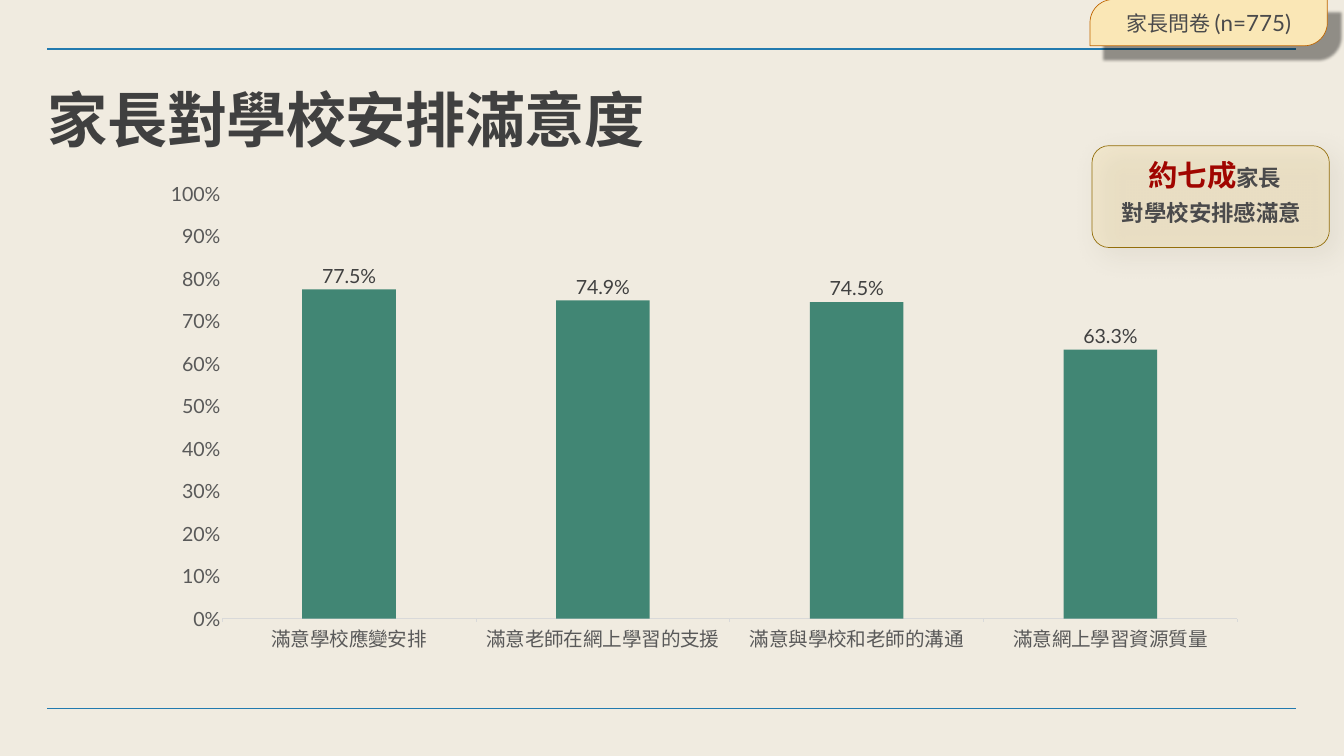
import lxml.etree
import pptx
import pptx.chart.data
import pptx.dml.color
import pptx.enum.chart
import pptx.enum.shapes
import pptx.enum.text
import pptx.oxml.ns
import pptx.util

COLOURS = {
    "page": "F0EBE0", "rule": "227AAF", "title": "404040", "axis": "595959",
    "axis_line": "D9D9D9", "bar": "277765", "tag": "FAE7B6", "tag_line": "BF6500",
    "card": "F7DC92", "card_line": "936E0A", "text": "4A4A4B", "accent": "A00500",
    "tag_shadow": "000000", "card_shadow": "4E4226",
}
RGB = {name: pptx.dml.color.RGBColor.from_string(value) for name, value in COLOURS.items()}
QN = pptx.oxml.ns.qn
CENTER = pptx.enum.text.PP_ALIGN.CENTER

deck = pptx.Presentation()
deck.slide_width = pptx.util.Inches(26.67)
deck.slide_height = pptx.util.Inches(15)
page = deck.slides.add_slide(deck.slide_layouts[6])
page.background.fill.solid()
page.background.fill.fore_color.rgb = RGB["page"]


def percent(left, top, width, height):
    sides = (deck.slide_width, deck.slide_height) * 2
    return [round(side * share / 100) for side, share in zip(sides, (left, top, width, height))]


def set_font(font, size, colour, bold=False, name="Lato"):
    values = {"size": pptx.util.Pt(size), "name": name, "bold": bold}
    for key, value in values.items():
        setattr(font, key, value)
    font.color.rgb = RGB[colour]


for height, weight in ((6.47, 4), (93.73, 1)):
    rule = page.shapes.add_connector(
        pptx.enum.shapes.MSO_CONNECTOR.STRAIGHT, *percent(3.52, height, 96.44, height))
    rule.line.color.rgb = RGB["rule"]
    rule.line.width = pptx.util.Pt(weight)
    lxml.etree.SubElement(rule._element.spPr, QN("a:effectLst"))

title = page.shapes.add_textbox(*percent(3.34, 12.27, 85.83, 23.53))
para = title.text_frame.paragraphs[0]
para.line_spacing = 0.8
span = para.add_run()
span.text = "家長對學校安排滿意度"
set_font(span.font, 86, "title", True, "Arial")
span.font._element.set("spc", "-90")

satisfaction = pptx.chart.data.CategoryChartData(number_format="0.0%")
satisfaction.categories = [
    "滿意學校應變安排", "滿意老師在網上學習的支援", "滿意與學校和老師的溝通", "滿意網上學習資源質量"]
satisfaction.add_series("Series 1", (0.775, 0.749, 0.745, 0.633))
chart = page.shapes.add_chart(
    pptx.enum.chart.XL_CHART_TYPE.COLUMN_CLUSTERED,
    *percent(7.09, 24.07, 85.83, 64.87), satisfaction).chart
chart.has_legend = False
chart.has_title = False
set_font(chart.font, 24, "axis")

value_format = {
    "minimum_scale": 0, "maximum_scale": 1, "major_unit": 0.1, "has_major_gridlines": False,
    "major_tick_mark": pptx.enum.chart.XL_TICK_MARK.NONE,
}
for key, value in value_format.items():
    setattr(chart.value_axis, key, value)
chart.value_axis.tick_labels.number_format = "0%"
chart.value_axis.tick_labels.number_format_is_linked = False
chart.value_axis.format.line.fill.background()
chart.category_axis.major_tick_mark = pptx.enum.chart.XL_TICK_MARK.OUTSIDE
chart.category_axis.format.line.color.rgb = RGB["axis_line"]
chart.category_axis.format.line.width = pptx.util.Pt(0.75)
for axis in (chart.value_axis, chart.category_axis):
    set_font(axis.tick_labels.font, 28, "axis")

plot = chart.plots[0]
plot.gap_width = 171
plot.vary_by_categories = False
plot.has_data_labels = True
label_format = {
    "number_format": "0.0%", "number_format_is_linked": False, "show_value": True,
    "position": pptx.enum.chart.XL_LABEL_POSITION.OUTSIDE_END,
}
for key, value in label_format.items():
    setattr(plot.data_labels, key, value)
set_font(plot.data_labels.font, 28, "title")
bars = plot.series[0].format.fill
bars.solid()
bars.fore_color.rgb = RGB["bar"]

plot_area = chart._chartSpace.find(".//" + QN("c:plotArea"))
for old_layout in plot_area.findall(QN("c:layout")):
    plot_area.remove(old_layout)
layout = lxml.etree.Element(QN("c:layout"))
plot_area.insert(0, layout)
manual = lxml.etree.SubElement(layout, QN("c:manualLayout"))
plot_layout = {
    "layoutTarget": "inner", "xMode": "edge", "yMode": "edge",
    "x": 0.11, "y": 0.02, "w": 0.88, "h": 0.87,
}
for key, value in plot_layout.items():
    lxml.etree.SubElement(manual, QN("c:" + key)).set("val", str(value))

SHAPE = pptx.enum.shapes.MSO_SHAPE
panels = {
    "tag": (SHAPE.ROUND_2_DIAG_RECTANGLE, (81.1, -0.07, 17.66, 6.13), (40, 4, 27)),
    "card": (SHAPE.ROUNDED_RECTANGLE, (81.25, 19.27, 17.66, 13.47), (30, 37, 16)),
}
boxes = {}
for name, (kind, area, (opacity, blur, distance)) in panels.items():
    box = boxes[name] = page.shapes.add_shape(kind, *percent(*area))
    box.fill.solid()
    box.fill.fore_color.rgb = RGB[name]
    box.line.color.rgb = RGB[name + "_line"]
    box.line.width = pptx.util.Pt(1)
    box.shadow.inherit = False
    shadow = lxml.etree.SubElement(box._element.spPr.find(QN("a:effectLst")), QN("a:outerShdw"))
    shadow_format = {
        "blurRad": pptx.util.Pt(blur), "dist": pptx.util.Pt(distance),
        "dir": 45 * 60000, "algn": "tl", "rotWithShape": 0,
    }
    for key, value in shadow_format.items():
        shadow.set(key, str(value))
    tint = lxml.etree.SubElement(shadow, QN("a:srgbClr"), val=COLOURS[name + "_shadow"])
    lxml.etree.SubElement(tint, QN("a:alpha"), val=str(opacity * 1000))
boxes["tag"].adjustments[0] = 0.5

see_through = {"bar": (plot_area, 87), "card": (boxes["card"]._element.spPr, 23)}
for name, (owner, opacity) in see_through.items():
    for tint in owner.iter(QN("a:srgbClr")):
        if tint.get("val") == COLOURS[name]:
            lxml.etree.SubElement(tint, QN("a:alpha"), val=str(opacity * 1000))

message = page.shapes.add_textbox(*percent(83.17, 19.87, 13.95, 10.93))
texts = [
    (boxes["tag"], True, 0, [
        [("家長問卷 ", 30, "text", False), ("(n=775)", 32, "text", False)]]),
    (message, False, 10, [
        [(" 約七成", 42, "accent", True), ("家長", 32, "text", True)],
        [("對學校安排感滿意", 32, "text", True)]]),
]
for box, wrap, gap, lines in texts:
    for number, line in enumerate(lines):
        para = box.text_frame.paragraphs[0] if number == 0 else box.text_frame.add_paragraph()
        para.alignment = CENTER
        para.space_before = pptx.util.Pt(gap)
        for words, size, colour, bold in line:
            span = para.add_run()
            span.text = words
            set_font(span.font, size, colour, bold)

TOP, MIDDLE = pptx.enum.text.MSO_ANCHOR.TOP, pptx.enum.text.MSO_ANCHOR.MIDDLE
for box, wrap, anchor in (
        (title, True, TOP), (boxes["tag"], True, MIDDLE), (message, False, MIDDLE)):
    frame_format = {"word_wrap": wrap, "vertical_anchor": anchor}
    for side in ("left", "right", "top", "bottom"):
        frame_format["margin_" + side] = pptx.util.Inches(0.06)
    for key, value in frame_format.items():
        setattr(box.text_frame, key, value)

deck.save("out.pptx")
